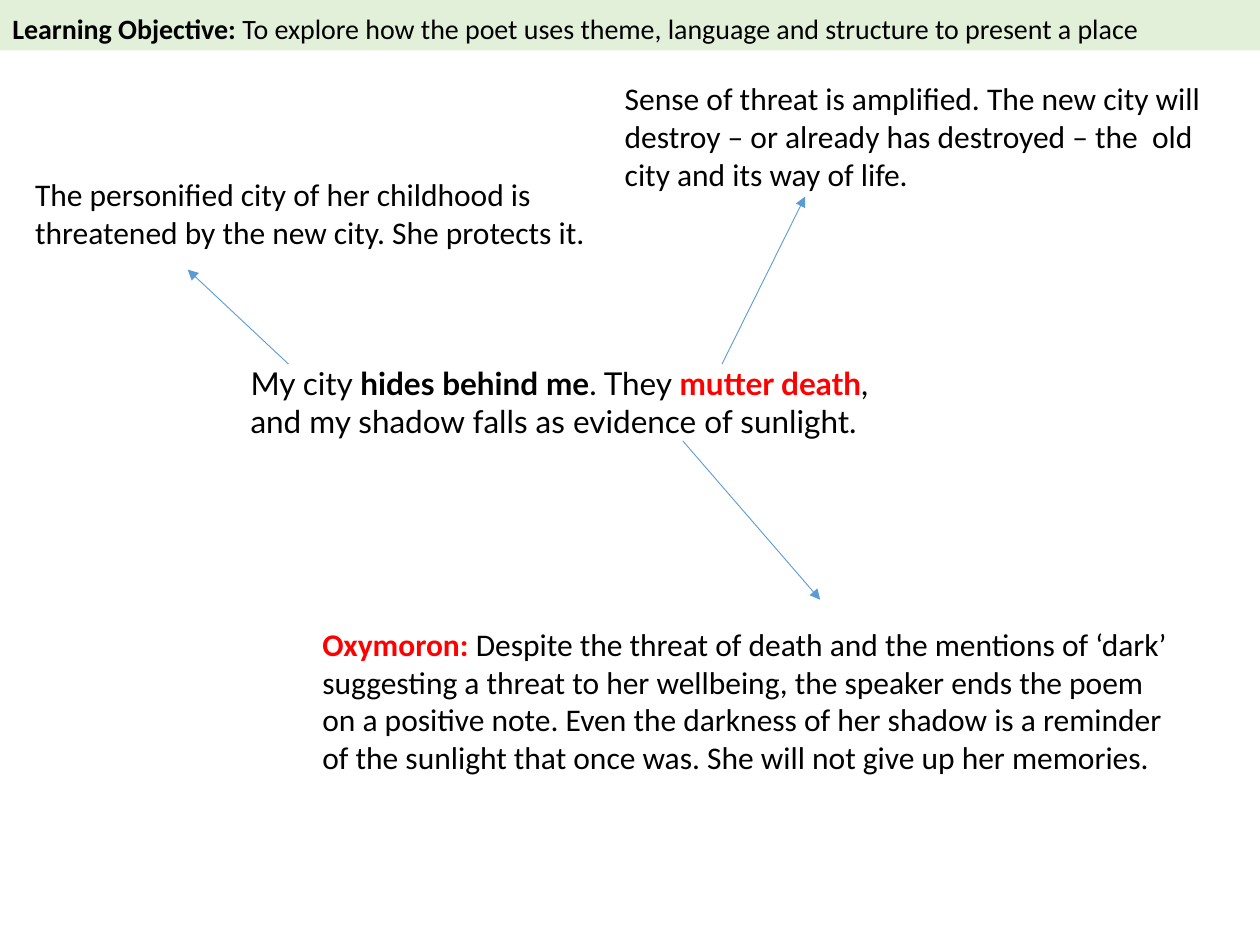
from lxml import etree
from pptx import Presentation
from pptx.dml.color import RGBColor
from pptx.enum.shapes import MSO_CONNECTOR, MSO_SHAPE
from pptx.enum.text import MSO_ANCHOR, PP_ALIGN
from pptx.oxml.ns import qn
from pptx.util import Inches, Pt

STRAIGHT = MSO_CONNECTOR.STRAIGHT
RECTANGLE = MSO_SHAPE.RECTANGLE
TOP = MSO_ANCHOR.TOP
LEFT = PP_ALIGN.LEFT

COLORS = {"text": "000000", "key": "FF0000", "bar": "E2F0D9", "arrow": "5B9BD5"}

# Run styles: font attributes and colour name
PLAIN = {"bold": False, "color": "text"}
BOLD = {"bold": True, "color": "text"}
KEY = {"bold": True, "color": "key"}

OBJECTIVE = [[
    ("Learning Objective: ", BOLD),
    ("To explore how the poet uses theme, language and structure to present a place", PLAIN),
]]
QUOTE = [
    [("My city ", PLAIN), ("hides behind me", BOLD), (". They ", PLAIN),
     ("mutter death", KEY), (",", PLAIN)],
    [("and my shadow falls as evidence of sunlight.", PLAIN)],
]
# Each note: box, paragraphs
NOTES = [
    ((0.18, 1.34, 4.61, 0.71), [[
        ("The personified city of her childhood is threatened by the new city. "
         "She protects it.", PLAIN)]]),
    ((4.86, 0.58, 4.78, 1.01), [[
        ("Sense of threat is amplified. The new city will destroy – or already has "
         "destroyed – the  old city and its way of life.", PLAIN)]]),
    ((2.46, 4.91, 6.98, 1.31), [[
        ("Oxymoron: ", KEY),
        ("Despite the threat of death and the mentions of ‘dark’ suggesting a threat "
         "to her wellbeing, the speaker ends the poem on a positive note. Even the "
         "darkness of her shadow is a reminder of the sunlight that once was. She will "
         "not give up her memories.", PLAIN)]]),
]
# Arrows from the quotation to its notes: start, end
ARROWS = [
    ((2.29, 2.89), (1.49, 2.14)),
    ((5.73, 2.89), (6.39, 1.56)),
    ((5.42, 3.5), (6.51, 4.76)),
]


def color(name):
    return RGBColor.from_string(COLORS[name])


def write_text(frame, paragraphs, font_name, size):
    frame.word_wrap = True
    frame.vertical_anchor = TOP
    for index, runs in enumerate(paragraphs):
        paragraph = frame.add_paragraph() if index else frame.paragraphs[0]
        paragraph.alignment = LEFT
        for text, style in runs:
            run = paragraph.add_run()
            run.text = text
            font_format = {"name": font_name, "size": Pt(size), "bold": style["bold"]}
            for attribute, value in font_format.items():
                setattr(run.font, attribute, value)
            run.font.color.rgb = color(style["color"])


def add_objective_bar(slide, box):
    bar = slide.shapes.add_shape(RECTANGLE, *map(Inches, box))
    bar.shadow.inherit = False
    bar.fill.solid()
    bar.fill.fore_color.rgb = color("bar")
    bar.line.fill.background()
    bar.text_frame.margin_top = Inches(0.09)
    write_text(bar.text_frame, OBJECTIVE, "Calibri", 16)


def add_text(slide, box, paragraphs, font_name):
    text_box = slide.shapes.add_textbox(*map(Inches, box))
    write_text(text_box.text_frame, paragraphs, font_name, 18)


def add_arrow(slide, start, end):
    arrow = slide.shapes.add_connector(STRAIGHT, *map(Inches, start + end))
    arrow.line.color.rgb = color("arrow")
    arrow.line.width = Pt(0.5)
    # Arrowhead, and no shadow
    etree.SubElement(arrow.line._get_or_add_ln(), qn("a:tailEnd"), type="triangle")
    etree.SubElement(arrow._element.spPr, qn("a:effectLst"))


def main():
    presentation = Presentation()
    presentation.slide_width = Inches(10)
    presentation.slide_height = Inches(7.5)
    slide = presentation.slides.add_slide(presentation.slide_layouts[6])

    # Quotation and objective
    add_text(slide, (1.89, 2.84, 6.34, 0.71), QUOTE, "Lato")
    add_objective_bar(slide, (0, 0, 10, 0.4))

    # Notes around the quotation
    for start, end in ARROWS:
        add_arrow(slide, start, end)
    for box, paragraphs in NOTES:
        add_text(slide, box, paragraphs, "Calibri")

    presentation.save("out.pptx")


if __name__ == "__main__":
    main()
